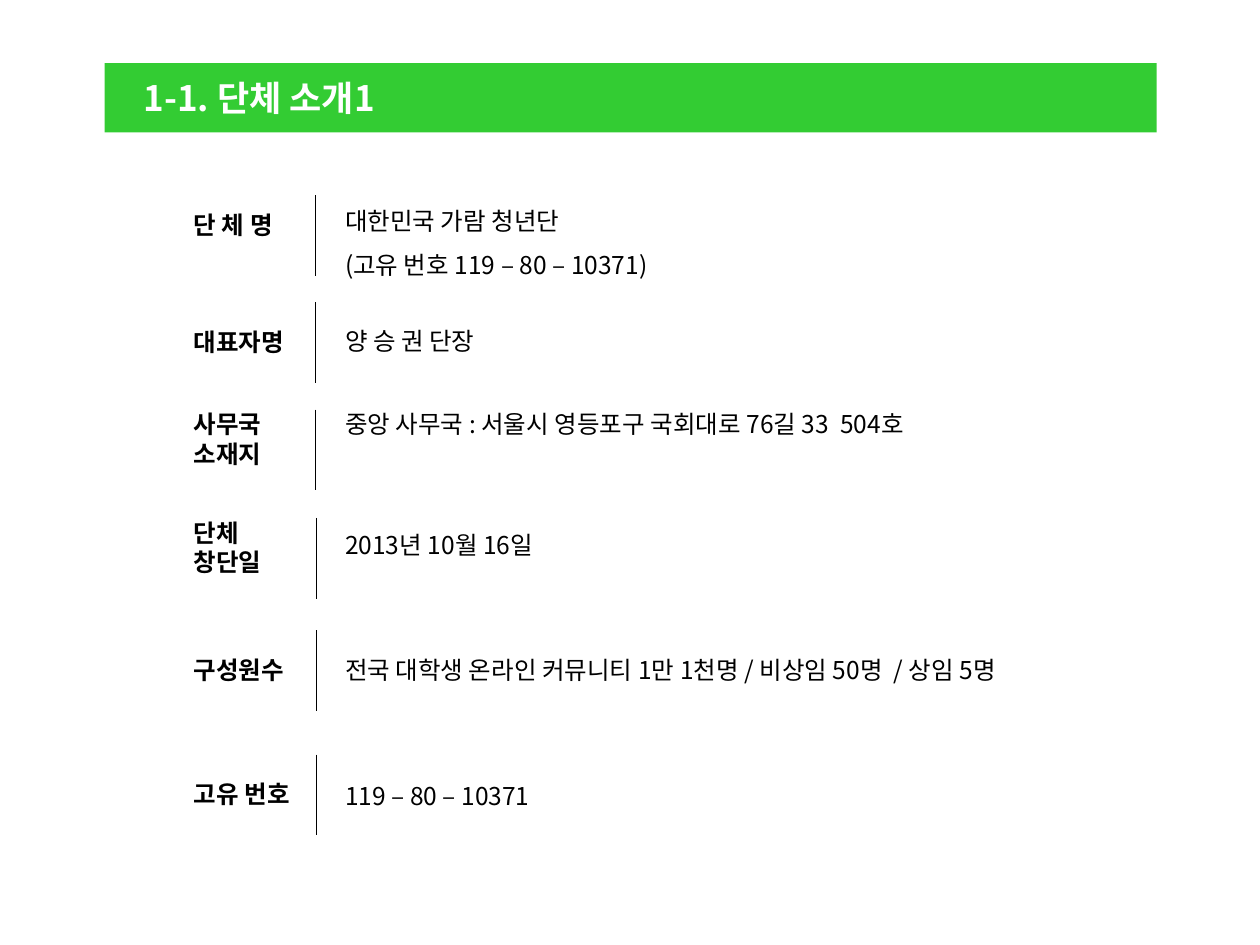
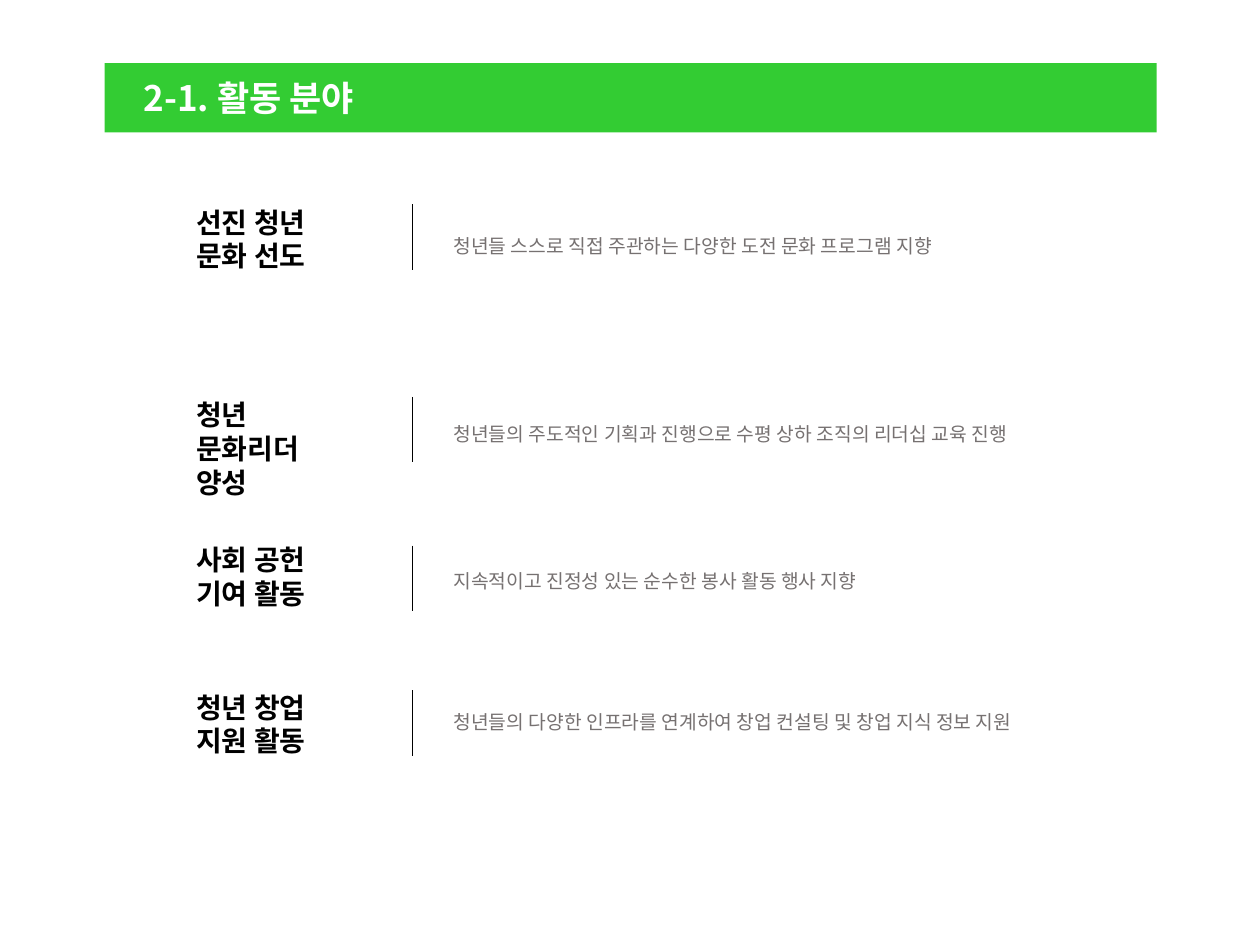
"""Build two slides that introduce a youth organisation and its fields of activity."""
from dataclasses import dataclass

import lxml.etree
import pptx
import pptx.dml.color
import pptx.enum.shapes
import pptx.enum.text
import pptx.oxml.ns
import pptx.presentation
import pptx.slide
import pptx.util

EMU_PER_PX = 9144
FONT = "Noto Sans CJK KR"
BLACK = "000000"
WHITE = "FFFFFF"
GREEN = "33CC33"
GREY = "767171"


@dataclass(frozen=True)
class TextStyle:
    size: int
    color: str = BLACK
    bold: bool = False
    spacing: float | None = None


@dataclass(frozen=True)
class Block:
    top: int
    width: int
    height: int
    lines: tuple[str, ...]
    spacing: float | None = None


@dataclass(frozen=True)
class Row:
    label: Block
    rule_x: int
    rule_top: int
    value: Block


@dataclass(frozen=True)
class Page:
    title: str
    title_width: int
    label_left: int
    value_left: int
    rule_length: int
    label_style: TextStyle
    value_style: TextStyle
    rows: tuple[Row, ...]


TITLE = TextStyle(20, WHITE, True)

ABOUT = Page(
    "1-1. 단체 소개1", 278, 144, 264, 64, TextStyle(14, bold=True), TextStyle(14),
    (
        Row(Block(162, 156, 34, ("단 체 명",)), 250, 155,
            Block(147, 680, 77, ("대한민국 가람 청년단", "(고유 번호 119 – 80 – 10371)"), 1.5)),
        Row(Block(255, 156, 34, ("대표자명",)), 250, 240,
            Block(254, 675, 34, ("양 승 권 단장",))),
        Row(Block(320, 156, 57, ("사무국", "소재지")), 250, 325,
            Block(320, 709, 57, ("중앙 사무국 : 서울시 영등포구 국회대로 76길 33  504호",))),
        Row(Block(406, 146, 57, ("단체", "창단일")), 251, 411,
            Block(416, 709, 34, ("2013년 10월 16일",))),
        Row(Block(515, 146, 34, ("구성원수",)), 251, 500,
            Block(515, 709, 34,
                  ("전국 대학생 온라인 커뮤니티 1만 1천명 / 비상임 50명  / 상임 5명",))),
        Row(Block(613, 175, 34, ("고유 번호",)), 251, 599,
            Block(603, 709, 41, ("119 – 80 – 10371",), 1.5)),
    ),
)


def activity(label_top: int, label_width: int, label: tuple[str, ...],
             rule_top: int, value_top: int, value: str) -> Row:
    """Describe one field of activity."""
    return Row(Block(label_top, label_width, 64, label), 327, rule_top,
               Block(value_top, 630, 34, (value,), 1.5))


ACTIVITIES = Page(
    "2-1. 활동 분야", 230, 146, 350, 52, TextStyle(16, bold=True), TextStyle(11, GREY),
    (
        activity(158, 142, ("선진 청년 문화 선도",), 162, 172,
                 "청년들 스스로 직접 주관하는 다양한 도전 문화 프로그램 지향"),
        activity(311, 118, ("청년 문화리더 양성",), 315, 321,
                 "청년들의 주도적인 기획과 진행으로 수평 상하 조직의 리더십 교육 진행"),
        activity(426, 118, ("사회 공헌 기여 활동",), 433, 438,
                 "지속적이고 진정성 있는 순수한 봉사 활동 행사 지향"),
        activity(543, 118, ("청년 창업", "지원 활동"), 548, 550,
                 "청년들의 다양한 인프라를 연계하여 창업 컨설팅 및 창업 지식 정보 지원"),
    ),
)


def px(length: int) -> pptx.util.Emu:
    """Turn px into EMU."""
    return pptx.util.Emu(length * EMU_PER_PX)


def rgb(value: str) -> pptx.dml.color.RGBColor:
    """Turn a hex string into a colour."""
    return pptx.dml.color.RGBColor.from_string(value)


def add_text(slide: pptx.slide.Slide, left: int, block: Block, style: TextStyle) -> None:
    """Write a block of paragraphs in a wrapping text box."""
    box = slide.shapes.add_textbox(px(left), px(block.top), px(block.width), px(block.height))
    frame = box.text_frame
    frame.word_wrap = True
    frame.auto_size = pptx.enum.text.MSO_AUTO_SIZE.SHAPE_TO_FIT_TEXT
    for index, line in enumerate(block.lines):
        para = frame.add_paragraph() if index else frame.paragraphs[0]
        if block.spacing:
            para.line_spacing = block.spacing
        span = para.add_run()
        span.text = line
        span.font.size = pptx.util.Pt(style.size)
        span.font.bold = style.bold
        span.font.color.rgb = rgb(style.color)
        span.font.name = FONT
        east_asian = lxml.etree.SubElement(span.font._element, pptx.oxml.ns.qn("a:ea"))
        east_asian.set("typeface", FONT)


def add_rule(slide: pptx.slide.Slide, x: int, top: int, length: int) -> None:
    """Draw a thin upright line."""
    rule = slide.shapes.add_connector(
        pptx.enum.shapes.MSO_CONNECTOR.STRAIGHT, px(x), px(top), px(x), px(top + length))
    rule.line.color.rgb = rgb(BLACK)
    rule.line.width = pptx.util.Pt(0.5)
    lxml.etree.SubElement(rule._element.spPr, pptx.oxml.ns.qn("a:effectLst"))


def add_title(slide: pptx.slide.Slide, title: str, width: int) -> None:
    """Draw the green band with the title on it."""
    band = slide.shapes.add_shape(
        pptx.enum.shapes.MSO_SHAPE.RECTANGLE, px(83), px(50), px(835), px(55))
    band.shadow.inherit = False
    band.fill.solid()
    band.fill.fore_color.rgb = rgb(GREEN)
    band.line.fill.background()
    add_text(slide, 104, Block(56, width, 44, (title,)), TITLE)


def add_page(deck: pptx.presentation.Presentation, page: Page) -> None:
    """Add a slide with its title and its rows."""
    slide = deck.slides.add_slide(deck.slide_layouts[6])
    add_title(slide, page.title, page.title_width)
    for row in page.rows:
        add_text(slide, page.label_left, row.label, page.label_style)
        add_rule(slide, row.rule_x, row.rule_top, page.rule_length)
        add_text(slide, page.value_left, row.value, page.value_style)


def main() -> None:
    """Build and save the deck."""
    deck = pptx.Presentation()
    deck.slide_width, deck.slide_height = px(1000), px(750)
    for page in (ABOUT, ACTIVITIES):
        add_page(deck, page)
    deck.save("out.pptx")


if __name__ == "__main__":
    main()
